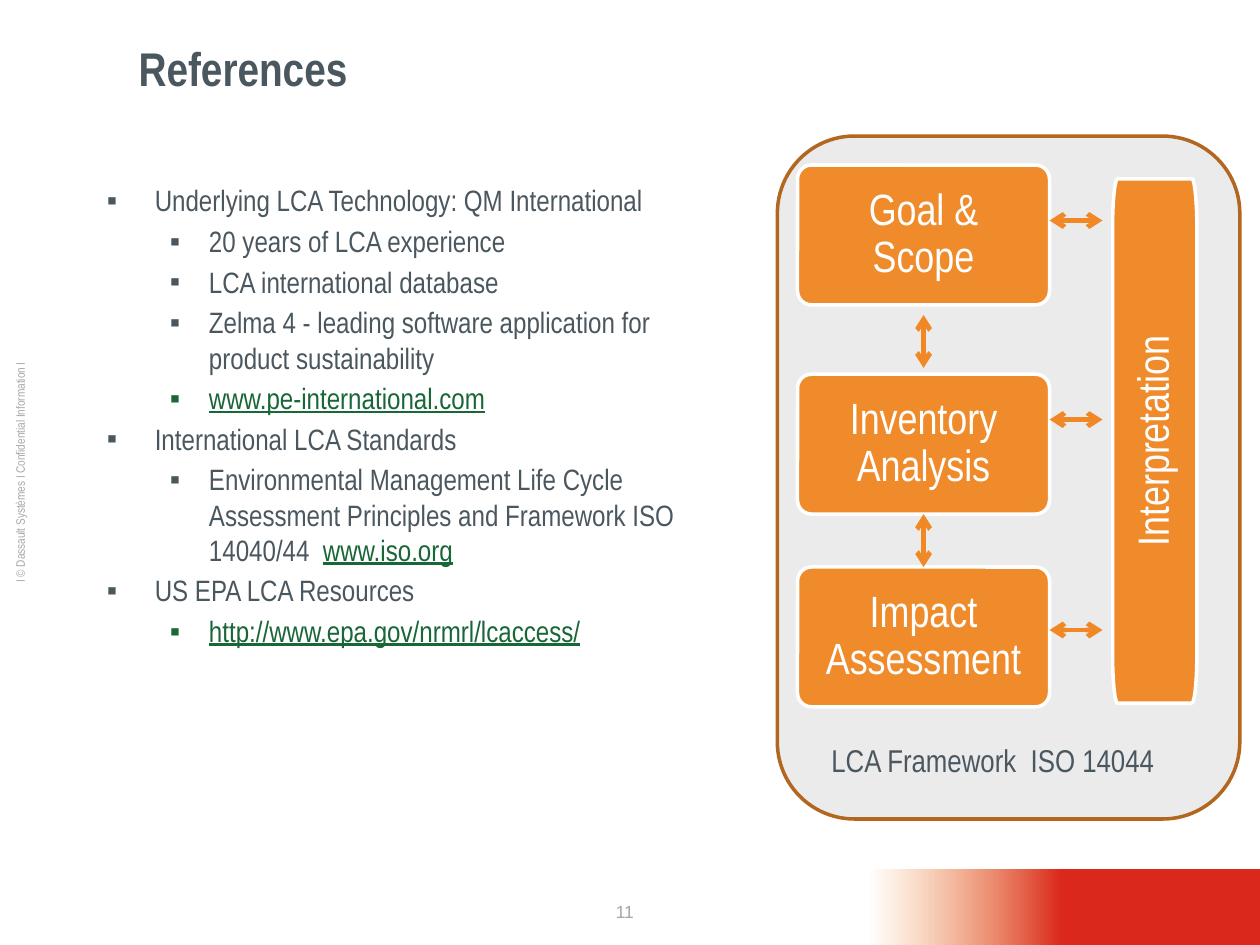
from dataclasses import dataclass
from math import cos, pi, sin

from lxml.etree import SubElement
from pptx import Presentation
from pptx.dml.color import RGBColor
from pptx.enum.shapes import MSO_CONNECTOR, MSO_SHAPE
from pptx.enum.text import MSO_ANCHOR, PP_ALIGN
from pptx.oxml.ns import qn
from pptx.util import Inches, Pt


@dataclass(frozen=True)
class Theme:
    narrow: str = "Arial Narrow"
    plain: str = "Arial"
    text: str = "4B575F"
    muted: str = "A6A6A6"
    link: str = "196637"
    white: str = "FFFFFF"
    orange: str = "EF8B2B"
    arrow: str = "EF8825"
    red: str = "DA291C"
    panel: str = "EBEBEC"
    panel_line: str = "B16720"
    title_size: float = 27
    stage_size: float = 25
    caption_size: float = 18
    body_size: float = 16.8
    number_size: float = 10
    notice_size: float = 7


theme = Theme()


def add_run(paragraph, text, size, color, font=theme.narrow, bold=None, underline=None):
    run = paragraph.add_run()
    run.text = text
    run.font.name = font
    run.font.size = Pt(size)
    run.font.bold = bold
    run.font.underline = underline
    run.font.color.rgb = RGBColor.from_string(color)


def style_shape(shape, fill, line, text=None):
    shape.shadow.inherit = False
    shape.fill.solid()
    shape.fill.fore_color.rgb = RGBColor.from_string(fill)
    shape.line.color.rgb = RGBColor.from_string(line)
    shape.line.width = Pt(2)
    if text:
        frame = shape.text_frame
        frame.word_wrap = True
        frame.vertical_anchor = MSO_ANCHOR.MIDDLE
        frame.margin_left = frame.margin_right = Inches(0.14)
        frame.margin_top = frame.margin_bottom = Inches(0.14)
        paragraph = frame.paragraphs[0]
        paragraph.alignment = PP_ALIGN.CENTER
        paragraph.line_spacing = 0.9
        add_run(paragraph, text, theme.stage_size, theme.white)


presentation = Presentation()
presentation.slide_width = Inches(10)
presentation.slide_height = Inches(7.5)
slide = presentation.slides.add_slide(presentation.slide_layouts[5])
shapes = slide.shapes

# Title
title = shapes.title
title.left, title.top = Inches(1), Inches(0.29)
title.width, title.height = Inches(9), Inches(0.5)
title.text_frame.vertical_anchor = MSO_ANCHOR.MIDDLE
title.text_frame.paragraphs[0].alignment = PP_ALIGN.LEFT
add_run(title.text_frame.paragraphs[0], "References", theme.title_size, theme.text, bold=True)

# Page number, side notice and diagram caption
labels = [
    ("11", (4.58, 7.1, 0.76, 0.4), 0, PP_ALIGN.CENTER,
     theme.number_size, theme.muted, theme.plain),
    ("Ι © Dassault Systèmes Ι Confidential Information Ι", (-3.59, 3.64, 7.5, 0.22), 270,
     PP_ALIGN.CENTER, theme.notice_size, theme.muted, theme.narrow),
    ("LCA Framework  ISO 14044", (6.5, 5.83, 3.17, 0.4), 0, PP_ALIGN.LEFT,
     theme.caption_size, theme.text, theme.narrow),
]

# Corner gradient band
band = shapes.add_shape(MSO_SHAPE.RECTANGLE, Inches(6.9), Inches(6.9), Inches(3.11), Inches(0.62))
band.shadow.inherit = False
band.line.fill.background()
band.fill.gradient()
band.fill.gradient_angle = 180
for stop, position, color in zip(band.fill.gradient_stops, (0.51, 1), (theme.red, theme.orange)):
    stop.position = position
    stop.color.rgb = RGBColor.from_string(color)
last_color = band.fill._fill._gradFill.findall(".//" + qn("a:srgbClr"))[-1]
SubElement(last_color, qn("a:alpha")).set("val", "0")

# Diagram panel
panel = shapes.add_shape(
    MSO_SHAPE.ROUNDED_RECTANGLE, Inches(6.17), Inches(1.08), Inches(3.67), Inches(5.42))
style_shape(panel, theme.panel, theme.panel_line)

for text, bounds, rotation, alignment, size, color, font in labels:
    label = shapes.add_textbox(*(Inches(value) for value in bounds))
    label.rotation = rotation
    label.text_frame.word_wrap = True
    label.text_frame.paragraphs[0].alignment = alignment
    add_run(label.text_frame.paragraphs[0], text, size, color, font)

# Bulleted references: level, then (text, is link) runs
references = [
    (0, [("Underlying LCA Technology: QM International", False)]),
    (1, [("20 years of LCA experience", False)]),
    (1, [("LCA international database", False)]),
    (1, [("Zelma 4 - leading software application for product sustainability", False)]),
    (1, [("www.pe-international.com", True)]),
    (0, [("International LCA Standards", False)]),
    (1, [("Environmental Management Life Cycle Assessment Principles and Framework "
          "ISO 14040/44  ", False), ("www.iso.org", True)]),
    (0, [("US EPA LCA Resources", False)]),
    (1, [("http://www.epa.gov/nrmrl/lcaccess/", True)]),
]
indents = [(0.38, -0.38), (0.81, -0.31)]
body = shapes.add_textbox(Inches(0.75), Inches(1.4), Inches(5.08), Inches(3.6))
body.text_frame.word_wrap = True
for index, (level, runs) in enumerate(references):
    paragraph = body.text_frame.paragraphs[0] if index == 0 else body.text_frame.add_paragraph()
    paragraph.level = level
    margin, hanging = indents[level]
    properties = paragraph._p.get_or_add_pPr()
    properties.set("marL", str(Inches(margin)))
    properties.set("indent", str(Inches(hanging)))
    SubElement(properties, qn("a:buFont")).set("typeface", theme.plain)
    SubElement(properties, qn("a:buChar")).set("char", "▪")
    if index:
        paragraph.space_before = Pt(3)
    for text, is_link in runs:
        add_run(paragraph, text, theme.body_size, theme.link if is_link else theme.text,
                underline=is_link)

# Stage boxes
stages = [("Goal & Scope", 1.31), ("Inventory Analysis", 2.97), ("Impact Assessment", 4.5)]
for text, top in stages:
    stage = shapes.add_shape(
        MSO_SHAPE.ROUNDED_RECTANGLE, Inches(6.33), Inches(top), Inches(2), Inches(1.11))
    stage.adjustments[0] = 0.1
    style_shape(stage, theme.orange, theme.white, text)

# Interpretation bar: a rectangle with tall elliptical corners
left, top, right, bottom = 8.83, 1.42, 9.5, 5.58
radius_x, radius_y, steps = 0.04, 0.41, 12
corners = [
    (left + radius_x, top + radius_y, pi),
    (right - radius_x, top + radius_y, 1.5 * pi),
    (right - radius_x, bottom - radius_y, 0),
    (left + radius_x, bottom - radius_y, 0.5 * pi),
]
outline = []
for center_x, center_y, start in corners:
    for step in range(steps + 1):
        angle = start + step / steps * pi / 2
        outline.append((Inches(center_x + radius_x * cos(angle)),
                        Inches(center_y + radius_y * sin(angle))))
builder = shapes.build_freeform(*outline[0])
builder.add_line_segments(outline[1:], close=True)
interpretation = builder.convert_to_shape()
style_shape(interpretation, theme.orange, theme.white, "Interpretation")
interpretation.text_frame._txBody.bodyPr.set("vert", "vert270")

# Two-way arrows
arrows = [(7.33, y, 7.33, y + 0.42) for y in (2.5, 4.08)]
arrows += [(8.33, y, 8.75, y) for y in (1.75, 3.33, 5)]
for ends in arrows:
    arrow = shapes.add_connector(MSO_CONNECTOR.STRAIGHT, *(Inches(value) for value in ends))
    arrow.line.color.rgb = RGBColor.from_string(theme.arrow)
    arrow.line.width = Pt(2.75)
    line = arrow.line._get_or_add_ln()
    for end in ("a:headEnd", "a:tailEnd"):
        SubElement(line, qn(end)).set("type", "arrow")
    SubElement(arrow._element.spPr, qn("a:effectLst"))

presentation.save("out.pptx")
